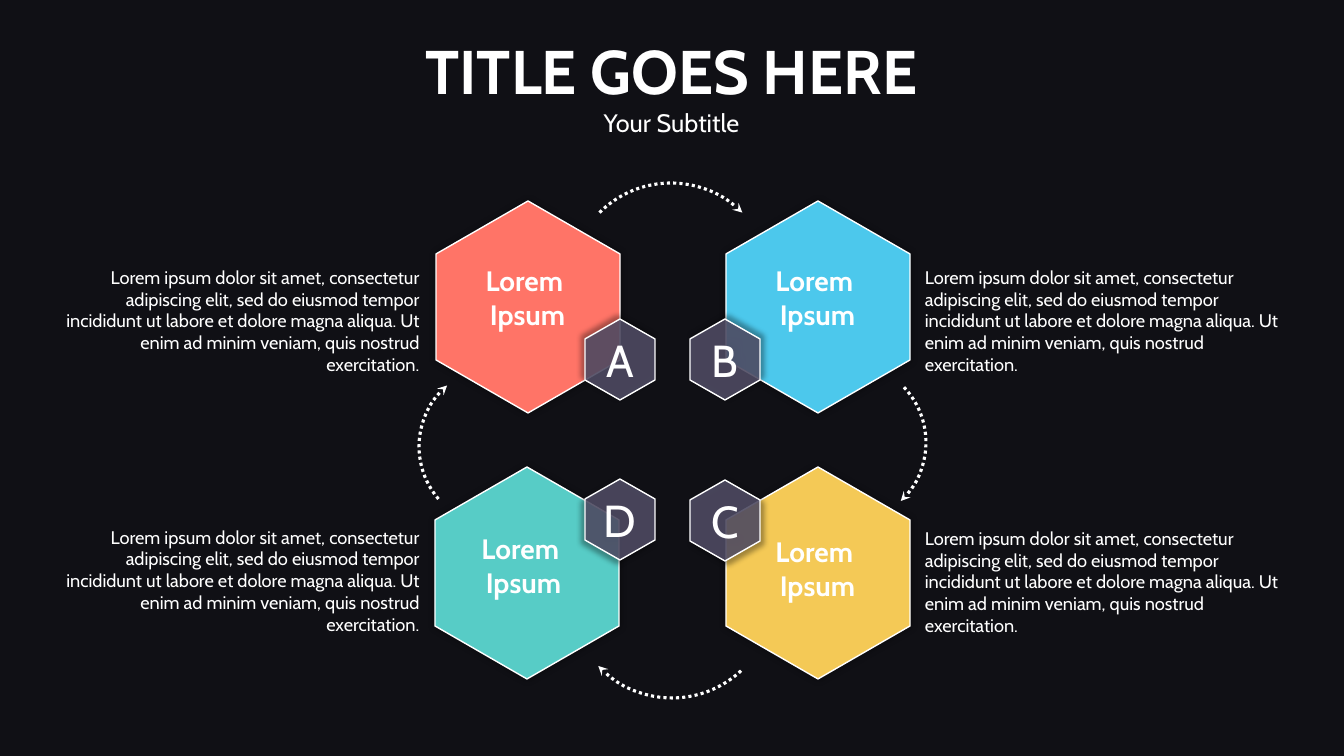
from lxml.etree import SubElement
from pptx import Presentation
from pptx.dml.color import RGBColor
from pptx.enum.dml import MSO_LINE
from pptx.enum.shapes import MSO_SHAPE
from pptx.enum.text import MSO_ANCHOR, MSO_AUTO_SIZE, PP_ALIGN as ALIGN
from pptx.oxml.ns import qn
from pptx.util import Pt

PX = 914400 / 100.8
FONT = "Cabin"
NIGHT = RGBColor(0x10, 0x10, 0x15)
WHITE = RGBColor(0xFF, 0xFF, 0xFF)
CORAL = RGBColor(0xFF, 0x74, 0x67)
SKY = RGBColor(0x4C, 0xC8, 0xEC)
TEAL = RGBColor(0x57, 0xCC, 0xC6)
AMBER = RGBColor(0xF4, 0xC9, 0x56)
PLUM = RGBColor(0x52, 0x4E, 0x67)

STAGE_SIZE = (184, 212)
BADGE_SIZE = (70, 81)
BODY = ("Lorem ipsum dolor sit amet, consectetur adipiscing elit, sed do eiusmod "
        "tempor incididunt ut labore et dolore magna aliqua. Ut enim ad minim "
        "veniam, quis nostrud exercitation.")

ARROWS = [
    (765, 362, 161, 46.6),
    (419, 366, 161, 229.3),
    (571, 496, 202, 136.9),
    (570, 183, 202, 315),
]
DESCRIPTIONS = [
    (915, 261, ALIGN.LEFT),
    (915, 522, ALIGN.LEFT),
    (53, 261, ALIGN.RIGHT),
    (53, 521, ALIGN.RIGHT),
]
STAGES = [
    (436, 201, CORAL, 452, 259),
    (726, 201, SKY, 742, 259),
    (435, 467, TEAL, 448, 527),
    (726, 467, AMBER, 742, 530),
]
BADGES = [
    ("A", 585, 319, 225),
    ("B", 690, 319, 315),
    ("D", 585, 479, 135),
    ("C", 690, 480, 45),
]


def px(*lengths):
    return [round(length * PX) for length in lengths]


def write(paragraph, text, size, bold, align):
    paragraph.text = text
    paragraph.alignment = align
    font = paragraph.font
    font.name = FONT
    font.size = Pt(size)
    font.bold = bold
    font.color.rgb = WHITE


def add_text(shapes, box, lines, align):
    frame = shapes.add_textbox(*px(*box)).text_frame
    frame.word_wrap = True
    frame.auto_size = MSO_AUTO_SIZE.SHAPE_TO_FIT_TEXT
    for index, (text, size, bold) in enumerate(lines):
        paragraph = frame.add_paragraph() if index else frame.paragraphs[0]
        write(paragraph, text, size, bold, align)


def add_alpha(color, percent):
    SubElement(color, qn("a:alpha"), val=str(percent * 1000))


def add_arrow(shapes, left, top, diameter, rotation):
    arrow = shapes.add_shape(MSO_SHAPE.ARC, *px(left, top, diameter, diameter))
    arrow.rotation = rotation
    arrow.shadow.inherit = False
    arrow.fill.background()
    arrow.line.color.rgb = WHITE
    arrow.line.width = Pt(2.25)
    arrow.line.dash_style = MSO_LINE.ROUND_DOT
    SubElement(arrow.line._get_or_add_ln(), qn("a:tailEnd"), type="stealth")


def add_shadow(shape, blur, distance, angle):
    shape.shadow.inherit = False
    effects = shape._element.spPr.find(qn("a:effectLst"))
    shadow = SubElement(effects, qn("a:outerShdw"), blurRad=str(Pt(blur)),
                        dist=str(Pt(distance)), dir=str(angle * 60000),
                        algn="ctr", rotWithShape="0")
    add_alpha(SubElement(shadow, qn("a:srgbClr"), val="000000"), 40)


def add_hexagon(shapes, left, top, size, color):
    width, height = size
    middle, right = left + width / 2, left + width
    upper, lower = top + height / 4, top + height * 3 / 4
    outline = shapes.build_freeform(middle, top, scale=PX)
    outline.add_line_segments([(right, upper), (right, lower), (middle, top + height),
                               (left, lower), (left, upper)])
    hexagon = outline.convert_to_shape()
    hexagon.fill.solid()
    hexagon.fill.fore_color.rgb = color
    hexagon.line.color.rgb = WHITE
    hexagon.line.width = Pt(1)
    return hexagon


def add_stage(shapes, left, top, color, label_left, label_top):
    stage = shapes.add_group_shape().shapes
    add_shadow(add_hexagon(stage, left, top, STAGE_SIZE, color), 5, 0, 0)
    add_text(stage, (label_left, label_top, 151, 78),
             [("Lorem ", 20, True), ("Ipsum", 20, True)], ALIGN.CENTER)


def add_badge(shapes, letter, left, top, shadow_angle):
    badge = add_hexagon(shapes, left, top, BADGE_SIZE, PLUM)
    add_alpha(badge._element.spPr.find(qn("a:solidFill"))[0], 85)
    add_shadow(badge, 4, 3, shadow_angle)
    frame = badge.text_frame
    frame.vertical_anchor = MSO_ANCHOR.MIDDLE
    frame.margin_left, frame.margin_right = px(13, 13)
    frame.margin_top, frame.margin_bottom = px(7, 7)
    write(frame.paragraphs[0], letter, 32, False, ALIGN.CENTER)


def main():
    deck = Presentation()
    deck.slide_width, deck.slide_height = px(1344, 756)
    slide = deck.slides.add_slide(deck.slide_layouts[6])
    slide.background.fill.solid()
    slide.background.fill.fore_color.rgb = NIGHT
    shapes = slide.shapes

    add_text(shapes, (368, 28, 607, 115),
             [("TITLE GOES HERE", 44, True), ("Your Subtitle", 18, False)], ALIGN.CENTER)
    for arrow in ARROWS:
        add_arrow(shapes, *arrow)
    for left, top, align in DESCRIPTIONS:
        add_text(shapes, (left, top, 376, 120), [(BODY, 13, False)], align)
    for stage in STAGES:
        add_stage(shapes, *stage)
    for badge in BADGES:
        add_badge(shapes, *badge)
    deck.save("out.pptx")


if __name__ == "__main__":
    main()
